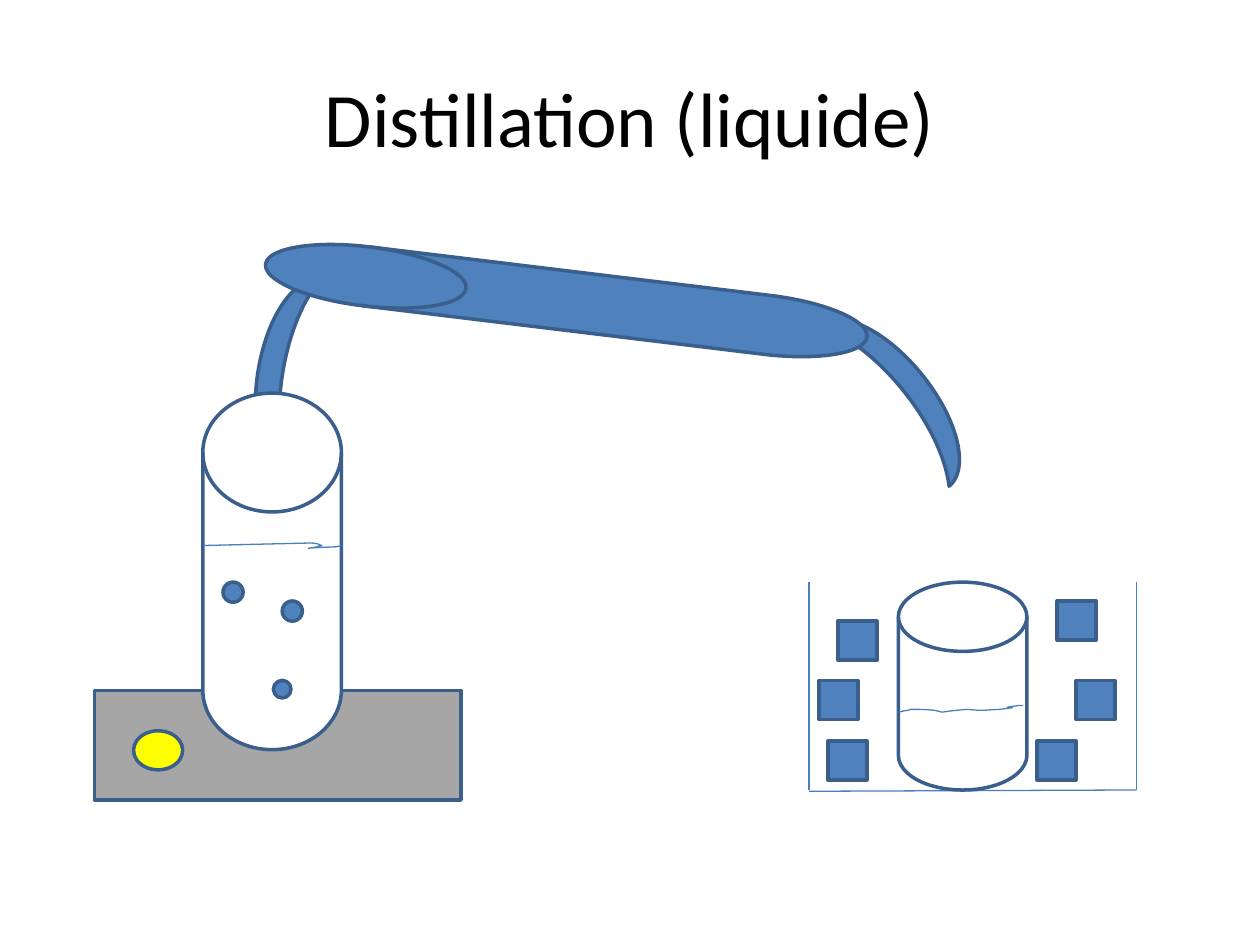
from pptx import Presentation
from pptx import util as u
from pptx.dml.color import RGBColor
from pptx.enum import shapes, text
from pptx.oxml.ns import qn
from lxml import etree

BLUE = RGBColor(0x4F, 0x81, 0xBD)
OUTLINE = RGBColor(0x3A, 0x5F, 0x8C)
THIN_LINE = RGBColor(0x4B, 0x7E, 0xBC)
GREY = RGBColor(0xA6, 0xA6, 0xA6)
YELLOW = RGBColor(0xFF, 0xFF, 0x00)
WHITE = RGBColor(0xFF, 0xFF, 0xFF)
BLACK = RGBColor(0x00, 0x00, 0x00)

KIND = shapes.MSO_SHAPE
CURVE_STEPS = 8


class Sketch:
    font = "Calibri"
    outline_width = u.Pt(2)
    thin_width = u.Pt(0.75)

    def __init__(self, page):
        self.page = page

    def title(self, words, left, top, width, height):
        box = self.page.shapes.title
        box.left, box.top = u.Inches(left), u.Inches(top)
        box.width, box.height = u.Inches(width), u.Inches(height)
        frame = box.text_frame
        frame.word_wrap = True
        frame.vertical_anchor = text.MSO_ANCHOR.MIDDLE
        para = frame.paragraphs[0]
        para.alignment = text.PP_ALIGN.CENTER
        span = para.add_run()
        span.text = words
        span.font.name = self.font
        span.font.size = u.Pt(44)
        span.font.color.rgb = BLACK

    def shape(self, kind, left, top, width, height, fill=BLUE, rotation=0):
        item = self.page.shapes.add_shape(
            kind, u.Inches(left), u.Inches(top), u.Inches(width), u.Inches(height))
        item.shadow.inherit = False
        item.fill.solid()
        item.fill.fore_color.rgb = fill
        item.line.color.rgb = OUTLINE
        item.line.width = self.outline_width
        item.rotation = rotation

    def line(self, start, end):
        item = self.page.shapes.add_connector(
            shapes.MSO_CONNECTOR.STRAIGHT, *(u.Inches(value) for value in start + end))
        item.line.color.rgb = THIN_LINE
        item.line.width = self.thin_width
        etree.SubElement(item._element.spPr, qn("a:effectLst"))

    def liquid_level(self, start, segments):
        points = [start]
        for segment in segments:
            points += [segment] if len(segment) == 2 else curve(points[-1], segment)
        scaled = [(u.Inches(x), u.Inches(y)) for x, y in points]
        builder = self.page.shapes.build_freeform(*scaled[0])
        builder.add_line_segments(scaled[1:], close=False)
        item = builder.convert_to_shape()
        item.shadow.inherit = False
        item.fill.background()
        item.line.color.rgb = THIN_LINE
        item.line.width = self.thin_width


def curve(start, segment):
    x1, y1, x2, y2, x3, y3 = segment
    corners = (start, (x1, y1), (x2, y2), (x3, y3))
    points = []
    for step in range(1, CURVE_STEPS + 1):
        t = step / CURVE_STEPS
        weights = ((1 - t) ** 3, 3 * t * (1 - t) ** 2, 3 * t ** 2 * (1 - t), t ** 3)
        points.append(tuple(
            sum(weight * corner[axis] for weight, corner in zip(weights, corners))
            for axis in (0, 1)))
    return points


def draw_heated_flask(sketch):
    sketch.shape(KIND.RECTANGLE, 0.75, 5.48, 2.91, 0.87, GREY)
    sketch.shape(KIND.OVAL, 1.06, 5.8, 0.39, 0.31, YELLOW)
    sketch.shape(KIND.FLOWCHART_MAGNETIC_DISK, 1.61, 3.12, 1.1, 2.83, WHITE)
    sketch.liquid_level((1.61, 4.33), [
        (2.45, 4.31),
        (2.48, 4.31, 2.52, 4.31, 2.55, 4.33),
        (2.57, 4.33, 2.53, 4.33, 2.52, 4.34),
        (2.42, 4.36, 2.38, 4.35, 2.67, 4.34),
        (2.71, 4.33),
    ])
    for left, top, size in ((1.77, 4.62, 0.16), (2.24, 4.77, 0.16), (2.17, 5.4, 0.14)):
        sketch.shape(KIND.OVAL, left, top, size, size)


def draw_ice_bath(sketch):
    left, right, top, bottom = 6.42, 9.02, 4.62, 6.27
    sketch.line((left, top), (left, bottom))
    sketch.line((right, bottom), (left, bottom + 0.01))
    sketch.line((right, top), (right, bottom))
    ice_cubes = ((8.54, 5.4), (8.39, 4.77), (6.57, 5.88),
                 (8.23, 5.88), (6.5, 5.4), (6.65, 4.93))
    for cube_left, cube_top in ice_cubes:
        sketch.shape(KIND.RECTANGLE, cube_left, cube_top, 0.31, 0.31)
    sketch.shape(KIND.FLOWCHART_MAGNETIC_DISK, 7.13, top, 1.02, bottom - top, WHITE)
    sketch.liquid_level((7.13, 5.65), [
        (7.15, 5.65, 7.17, 5.64, 7.19, 5.64),
        (7.21, 5.64, 7.22, 5.63, 7.23, 5.63),
        (7.3, 5.63, 7.37, 5.63, 7.43, 5.64),
        (7.5, 5.66, 7.46, 5.65, 7.57, 5.64),
        (7.67, 5.63),
        (7.81, 5.64, 7.76, 5.64, 7.93, 5.63),
        (8.2, 5.6, 7.84, 5.63, 8.08, 5.6),
        (8.1, 5.6, 8.11, 5.6, 8.12, 5.6),
    ])


def main():
    deck = Presentation()
    deck.slide_width, deck.slide_height = u.Inches(10), u.Inches(7.5)
    sketch = Sketch(deck.slides.add_slide(deck.slide_layouts[5]))
    sketch.title("Distillation (liquide)", 0.5, 0.3, 9, 1.25)
    sketch.shape(KIND.MOON, 6.97, 2.27, 0.39, 1.65, rotation=141)
    sketch.shape(KIND.MOON, 2.04, 2.19, 0.39, 1.65, rotation=7.7)
    draw_heated_flask(sketch)
    sketch.shape(KIND.FLOWCHART_MAGNETIC_DISK, 4.26, -0.02, 0.47, 4.81, rotation=276.9)
    draw_ice_bath(sketch)
    deck.save("out.pptx")


if __name__ == "__main__":
    main()
